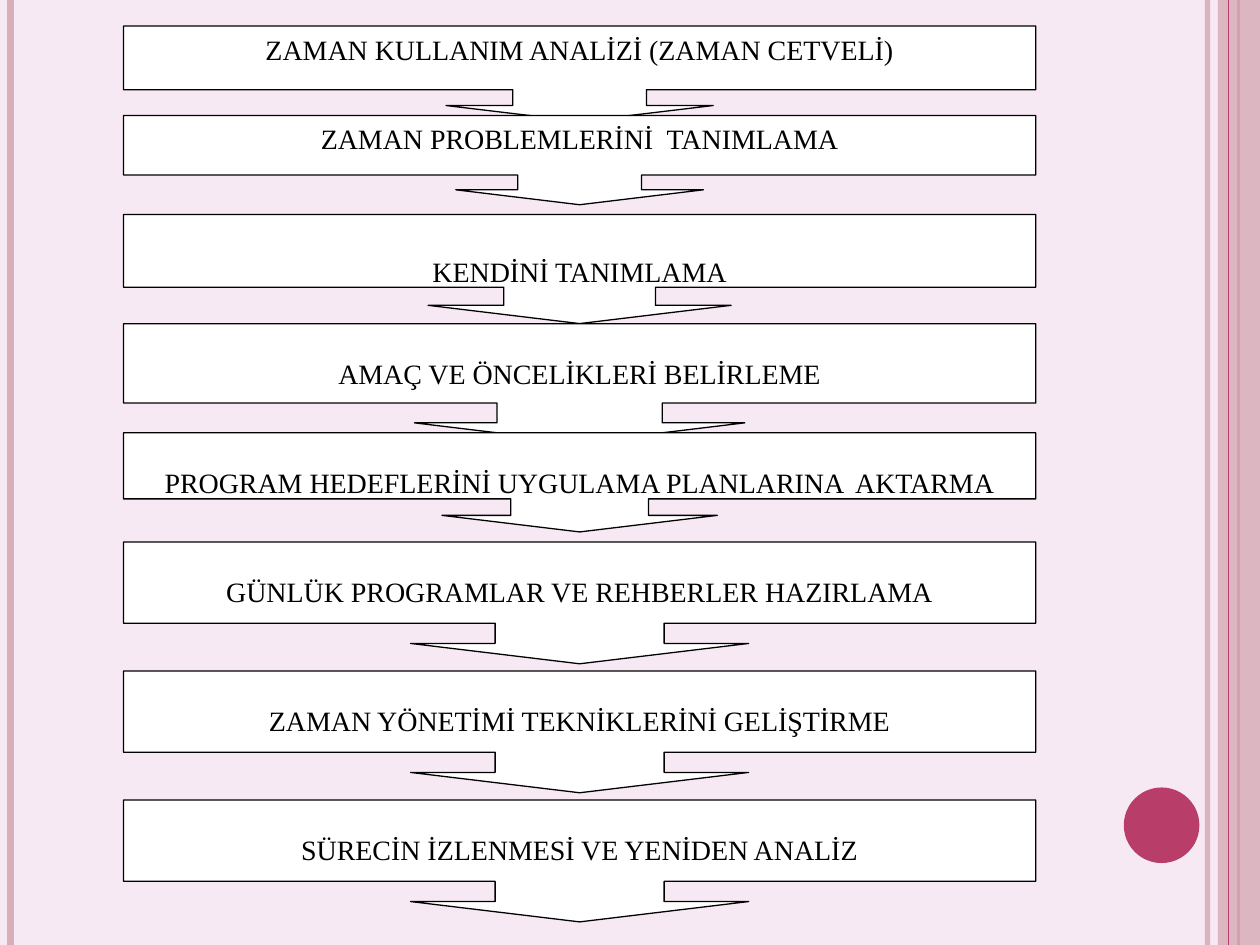
from dataclasses import dataclass

from lxml.etree import SubElement
from pptx import Presentation
from pptx.dml.color import RGBColor
from pptx.enum.shapes import MSO_CONNECTOR, MSO_SHAPE
from pptx.enum.text import MSO_ANCHOR, PP_ALIGN
from pptx.oxml.ns import qn
from pptx.slide import Slide
from pptx.util import Pt

BACKGROUND = RGBColor(0xF7, 0xE9, 0xF4)
DUSTY_PINK = RGBColor(0xD8, 0xAF, 0xB9)
RASPBERRY = RGBColor(0xB8, 0x3D, 0x68)
WHITE = RGBColor(0xFF, 0xFF, 0xFF)
BLACK = RGBColor(0x00, 0x00, 0x00)

SLIDE_WIDTH, SLIDE_HEIGHT = 720, 540
STEP_LEFT, STEP_WIDTH = 70.6, 521.3
BOX_SHARE, HEAD_SHARE = 0.667, 0.167
FONT_NAME, FONT_SIZE = "Times New Roman", 16


@dataclass(frozen=True)
class Stripe:
    x: float
    weight: float
    color: RGBColor
    opacity: int = 100


@dataclass(frozen=True)
class Step:
    text: str
    top: float
    height: float
    text_inset: float = 18.5
    arrow: float = 1.388


LEFT_STRIPES = [Stripe(690, 3, DUSTY_PINK, 93), Stripe(6, 4.5, DUSTY_PINK),
                Stripe(707.7, 1.5, RASPBERRY)]
EDGE_STRIPE = Stripe(702, 0.75, RASPBERRY)

STEPS = [
    Step("ZAMAN KULLANIM ANALİZİ (ZAMAN CETVELİ)", 14.9, 54.5, 3.6, 1.4),
    Step("ZAMAN PROBLEMLERİNİ  TANIMLAMA", 66, 51, 3.6),
    Step("KENDİNİ TANIMLAMA", 122.5, 62.4, 23),
    Step("AMAÇ VE ÖNCELİKLERİ BELİRLEME", 185, 68),
    Step("PROGRAM HEDEFLERİNİ UYGULAMA PLANLARINA  AKTARMA", 247.3, 56.7),
    Step("GÜNLÜK PROGRAMLAR VE REHBERLER HAZIRLAMA", 309.7, 69.6),
    Step("ZAMAN YÖNETİMİ TEKNİKLERİNİ GELİŞTİRME", 383.4, 69.6),
    Step("SÜRECİN İZLENMESİ VE YENİDEN ANALİZ", 457.2, 69.6),
]


def set_opacity(shape, percent: int) -> None:
    color = next(shape.element.spPr.iter(qn("a:srgbClr")))
    SubElement(color, qn("a:alpha")).set("val", str(percent * 1000))


def add_stripe(slide: Slide, stripe: Stripe) -> None:
    line = slide.shapes.add_connector(
        MSO_CONNECTOR.STRAIGHT, Pt(stripe.x), Pt(0), Pt(stripe.x), Pt(SLIDE_HEIGHT))
    line.line.color.rgb = stripe.color
    line.line.width = Pt(stripe.weight)
    SubElement(line.element.spPr, qn("a:effectLst"))
    if stripe.opacity < 100:
        set_opacity(line, stripe.opacity)


def add_plain_shape(slide: Slide, kind: MSO_SHAPE, left: float, top: float,
                    width: float, height: float, fill: RGBColor):
    shape = slide.shapes.add_shape(kind, Pt(left), Pt(top), Pt(width), Pt(height))
    shape.shadow.inherit = False
    shape.fill.solid()
    shape.fill.fore_color.rgb = fill
    shape.line.fill.background()
    return shape


def add_step(slide: Slide, step: Step) -> None:
    shape = add_plain_shape(slide, MSO_SHAPE.DOWN_ARROW_CALLOUT, STEP_LEFT, step.top,
                            STEP_WIDTH, step.height, WHITE)
    for index, value in enumerate((step.arrow, step.arrow, HEAD_SHARE, BOX_SHARE)):
        shape.adjustments[index] = value
    shape.line.color.rgb = BLACK
    shape.line.width = Pt(0.75)

    frame = shape.text_frame
    frame.word_wrap = True
    frame.vertical_anchor = MSO_ANCHOR.TOP
    frame.margin_top, frame.margin_bottom = Pt(step.text_inset), Pt(0)
    paragraph = frame.paragraphs[0]
    paragraph.alignment = PP_ALIGN.CENTER
    run = paragraph.add_run()
    run.text = step.text
    run.font.name = FONT_NAME
    run.font.size = Pt(FONT_SIZE)
    run.font.color.rgb = BLACK


def main() -> None:
    presentation = Presentation()
    presentation.slide_width = Pt(SLIDE_WIDTH)
    presentation.slide_height = Pt(SLIDE_HEIGHT)
    slide = presentation.slides.add_slide(presentation.slide_layouts[6])
    slide.background.fill.solid()
    slide.background.fill.fore_color.rgb = BACKGROUND

    # Side decoration
    for stripe in LEFT_STRIPES:
        add_stripe(slide, stripe)
    band = add_plain_shape(slide, MSO_SHAPE.RECTANGLE, 696, 0, 24, SLIDE_HEIGHT, DUSTY_PINK)
    set_opacity(band, 87)
    add_stripe(slide, EDGE_STRIPE)
    add_plain_shape(slide, MSO_SHAPE.OVAL, 642.2, 450, 43.2, 43.2, RASPBERRY)

    # Process steps, each overlapping the arrow above it
    for step in STEPS:
        add_step(slide, step)

    presentation.save("out.pptx")


if __name__ == "__main__":
    main()
